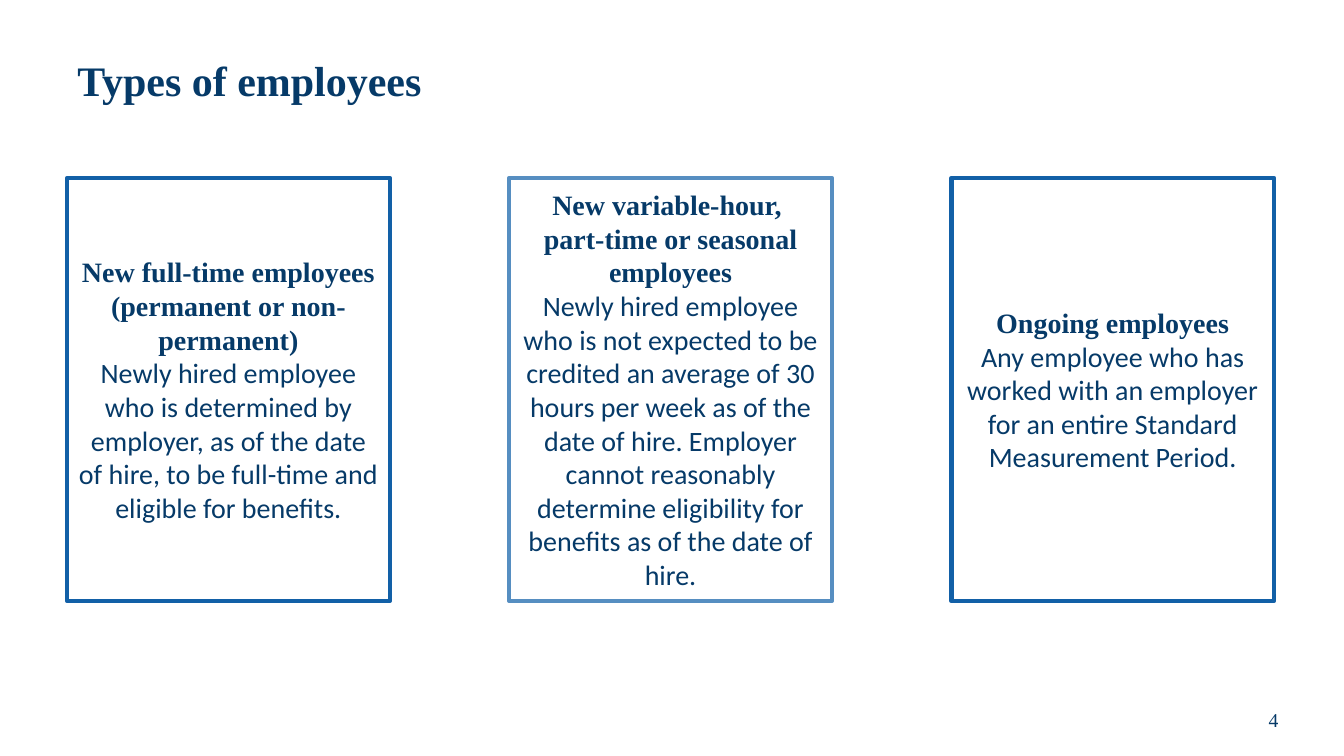
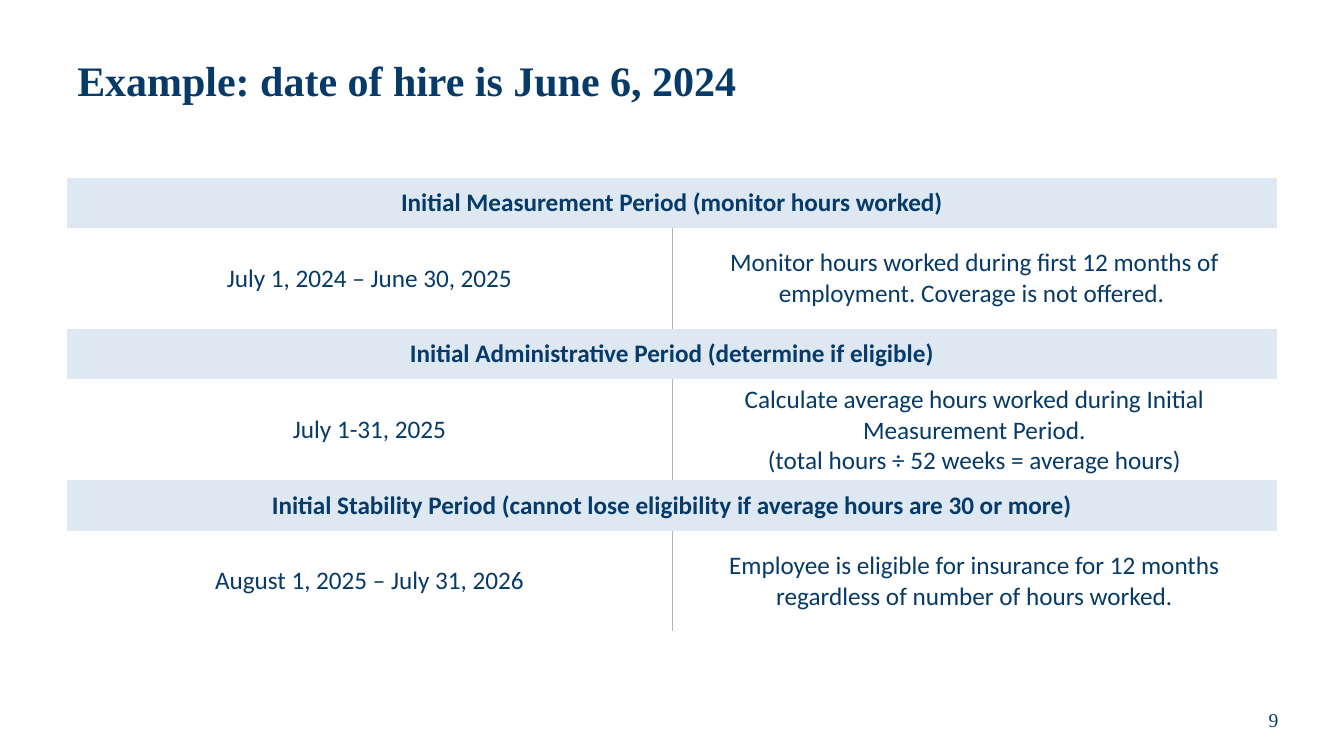
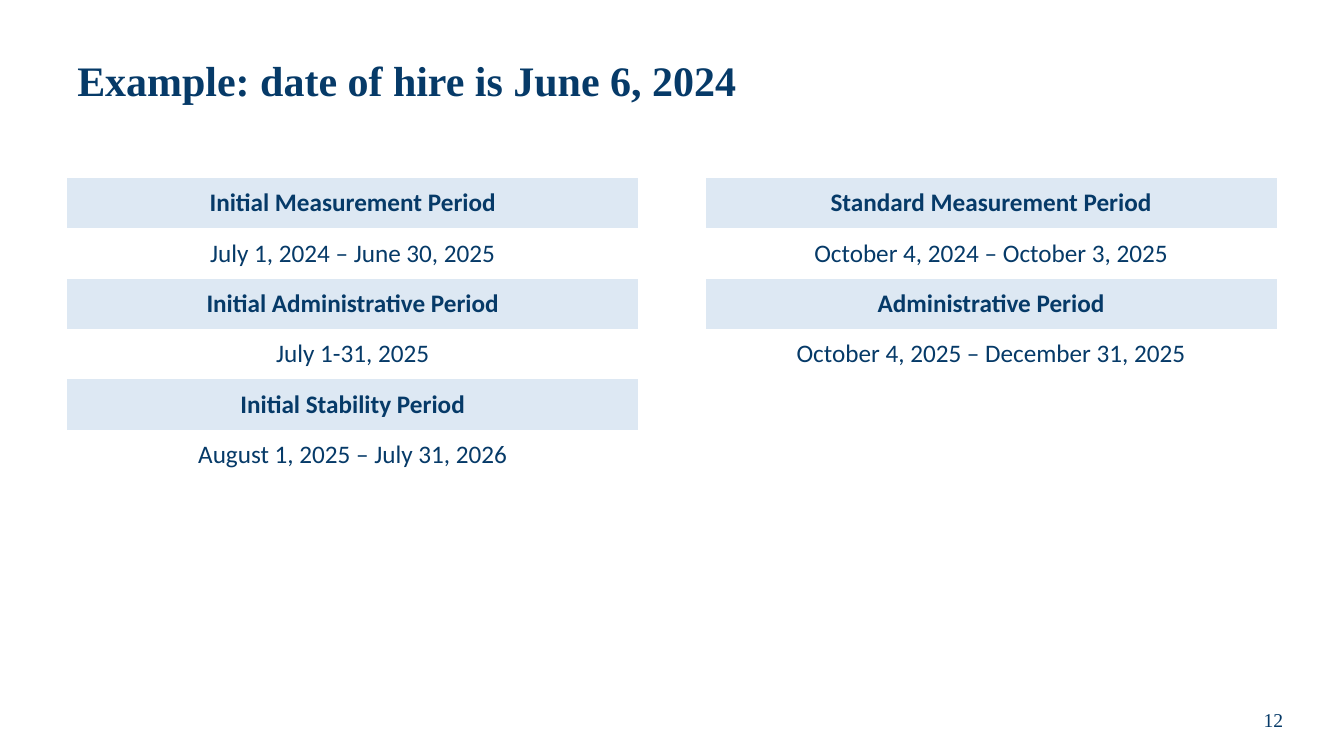
"""Build three slides on employee types and benefit measurement periods."""
from dataclasses import dataclass

import pptx
import pptx.dml.color
import pptx.enum.shapes
import pptx.enum.text
import pptx.oxml.ns
import pptx.util
from lxml import etree

Pt = pptx.util.Pt
qn = pptx.oxml.ns.qn
MIDDLE = pptx.enum.text.MSO_ANCHOR.MIDDLE
CENTER = pptx.enum.text.PP_ALIGN.CENTER
LEFT = pptx.enum.text.PP_ALIGN.LEFT

NAVY, BLUE, LIGHT_BLUE = "063A68", "1260A7", "568EC1"
BAND, DIVIDER = "DDE8F3", "B2B2B2"
PLAIN_TABLE = "{2D5ABB26-0587-4C30-8999-92F81FD0307C}"

MARGIN, TOP, WIDTH = 48, 127, 864
BOX_WIDTH, BOX_HEIGHT, BOX_GAP = 230.4, 302.4, 85.4
BAND_HEIGHT = 36

TITLE = dict(name="Times New Roman", size=Pt(30), bold=True)
NUMBER = dict(name="Times New Roman", size=Pt(14), bold=False)
BOX_HEAD = dict(name="Times New Roman", size=Pt(20), bold=True)
BOX_BODY = dict(name="Calibri", size=Pt(20), bold=False)
CELL_HEAD = dict(name="Calibri", size=Pt(18), bold=True)
CELL_BODY = dict(name="Calibri", size=Pt(18), bold=False)


@dataclass
class Box:
    """An outlined box with a heading and a description."""
    head: str
    body: str
    line: str


@dataclass
class Grid:
    """A table whose rows alternate between headings and details."""
    widths: list[float]
    body_height: float
    rows: list[tuple[str, ...]]
    divided: bool = False


BOXES = [
    Box("New full-time employees (permanent or non-permanent)",
        "Newly hired employee who is determined by employer, as of the date of hire, "
        "to be full-time and eligible for benefits.", BLUE),
    Box("New variable-hour, \vpart-time or seasonal employees",
        "Newly hired employee who is not expected to be credited an average of 30 hours "
        "per week as of the date of hire. Employer cannot reasonably determine "
        "eligibility for benefits as of the date of hire.", LIGHT_BLUE),
    Box("Ongoing employees",
        "Any employee who has worked with an employer for an entire Standard "
        "Measurement Period.", BLUE),
]

INITIAL = Grid([432, 432], 72, [
    ("Initial Measurement Period (monitor hours worked)",),
    ("July 1, 2024 – June 30, 2025",
     "Monitor hours worked during first 12 months of employment. Coverage is not offered. "),
    ("Initial Administrative Period (determine if eligible)",),
    ("July 1-31, 2025",
     "Calculate average hours worked during Initial Measurement Period.\n"
     "(total hours ÷ 52 weeks = average hours)"),
    ("Initial Stability Period (cannot lose eligibility if average hours are 30 or more)",),
    ("August 1, 2025 – July 31, 2026",
     "Employee is eligible for insurance for 12 months regardless of number of hours worked."),
], divided=True)

COMPARISON = Grid([408, 48, 408], 36, [
    ("Initial Measurement Period", "", "Standard Measurement Period"),
    ("July 1, 2024 – June 30, 2025", "", "October 4, 2024 – October 3, 2025"),
    ("Initial Administrative Period", "", "Administrative Period"),
    ("July 1-31, 2025", "", "October 4, 2025 – December 31, 2025"),
    ("Initial Stability Period", "", ""),
    ("August 1, 2025 – July 31, 2026", "", ""),
])


def rgb(value: str) -> pptx.dml.color.RGBColor:
    """Turn a hex string into a colour."""
    return pptx.dml.color.RGBColor.from_string(value)


def write(tf, lines: list[tuple[str, dict]], align=CENTER) -> None:
    """Fill a text frame with one formatted paragraph per line."""
    for i, (text, style) in enumerate(lines):
        p = tf.add_paragraph() if i else tf.paragraphs[0]
        p.text = text
        p.alignment = align
        for r in p.runs:
            for key, value in style.items():
                setattr(r.font, key, value)
            r.font.color.rgb = rgb(NAVY)


def add_slide(prs, title: str, number: int):
    """Add a slide with its title and page number."""
    s = prs.slides.add_slide(prs.slide_layouts[5])
    sp = s.shapes.title
    place = dict(left=Pt(MARGIN), top=Pt(18), width=Pt(WIDTH), height=Pt(82.8))
    for key, value in place.items():
        setattr(sp, key, value)
    tf = sp.text_frame
    tf.vertical_anchor = MIDDLE
    tf.auto_size = pptx.enum.text.MSO_AUTO_SIZE.NONE
    write(tf, [(title, TITLE)], LEFT)
    tf.paragraphs[0].line_spacing = 0.9
    tf = s.shapes.add_textbox(Pt(867.6), Pt(496), Pt(84), Pt(36)).text_frame
    tf.word_wrap = True
    tf.vertical_anchor = MIDDLE
    write(tf, [(str(number), NUMBER)])
    return s


def add_box(s, box: Box, left: float) -> None:
    """Draw one outlined box."""
    sp = s.shapes.add_shape(pptx.enum.shapes.MSO_SHAPE.RECTANGLE,
                            Pt(left), Pt(TOP), Pt(BOX_WIDTH), Pt(BOX_HEIGHT))
    sp.shadow.inherit = False
    sp.fill.background()
    sp.line.color.rgb = rgb(box.line)
    sp.line.width = Pt(3)
    tf = sp.text_frame
    tf.word_wrap = True
    tf.vertical_anchor = MIDDLE
    write(tf, [(box.head, BOX_HEAD), (box.body, BOX_BODY)])


def add_border(cell, side: str) -> None:
    """Draw a thin divider on one side of a cell."""
    ln = etree.Element(qn(f"a:{side}"), w=str(Pt(0.5)))
    fill = etree.SubElement(ln, qn("a:solidFill"))
    etree.SubElement(fill, qn("a:srgbClr"), val=DIVIDER)
    cell._tc.get_or_add_tcPr().insert(0, ln)


def add_grid(s, grid: Grid) -> None:
    """Draw a table with shaded heading rows."""
    heights = [grid.body_height if i % 2 else BAND_HEIGHT for i in range(len(grid.rows))]
    table = s.shapes.add_table(len(heights), len(grid.widths), Pt(MARGIN), Pt(TOP),
                               Pt(WIDTH), Pt(sum(heights))).table
    table._tbl.tblPr.find(qn("a:tableStyleId")).text = PLAIN_TABLE
    for column, width in zip(table.columns, grid.widths):
        column.width = Pt(width)
    for i, (texts, height) in enumerate(zip(grid.rows, heights)):
        table.rows[i].height = Pt(height)
        is_head = i % 2 == 0
        if len(texts) == 1:
            table.cell(i, 0).merge(table.cell(i, len(grid.widths) - 1))
        for j, text in enumerate(texts):
            cell = table.cell(i, j)
            cell.vertical_anchor = MIDDLE
            if is_head and text:
                cell.fill.solid()
                cell.fill.fore_color.rgb = rgb(BAND)
            else:
                cell.fill.background()
            style = CELL_HEAD if is_head else CELL_BODY
            write(cell.text_frame, [(line, style) for line in text.split("\n")])
            if grid.divided and not is_head:
                add_border(cell, "lnL" if j else "lnR")


def main() -> None:
    """Build and save the presentation."""
    prs = pptx.Presentation()
    prs.slide_width, prs.slide_height = Pt(960), Pt(540)
    s = add_slide(prs, "Types of employees", 4)
    for i, box in enumerate(BOXES):
        add_box(s, box, MARGIN + i * (BOX_WIDTH + BOX_GAP))
    for number, grid in ((9, INITIAL), (12, COMPARISON)):
        add_grid(add_slide(prs, "Example: date of hire is June 6, 2024", number), grid)
    prs.save("out.pptx")


if __name__ == "__main__":
    main()
